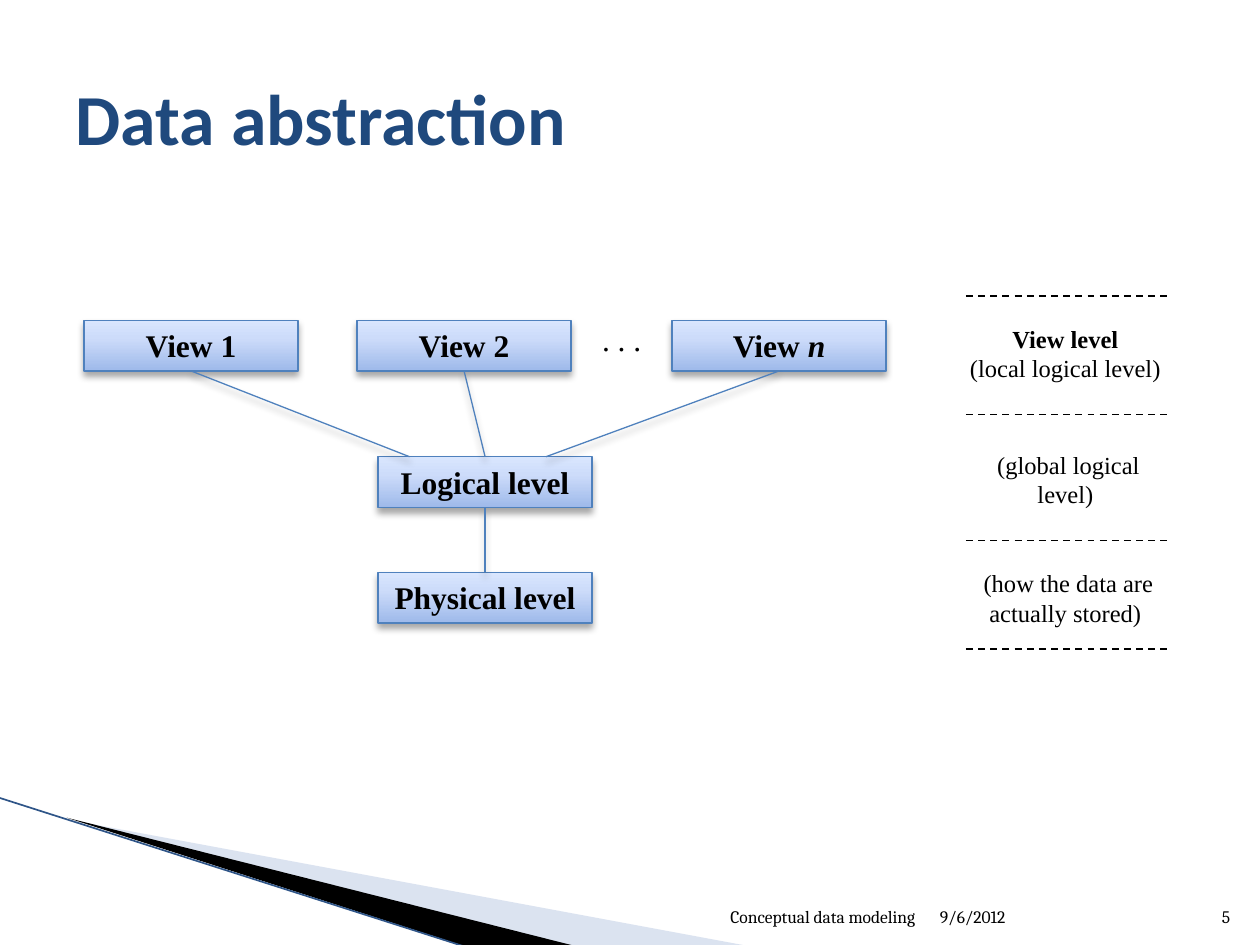
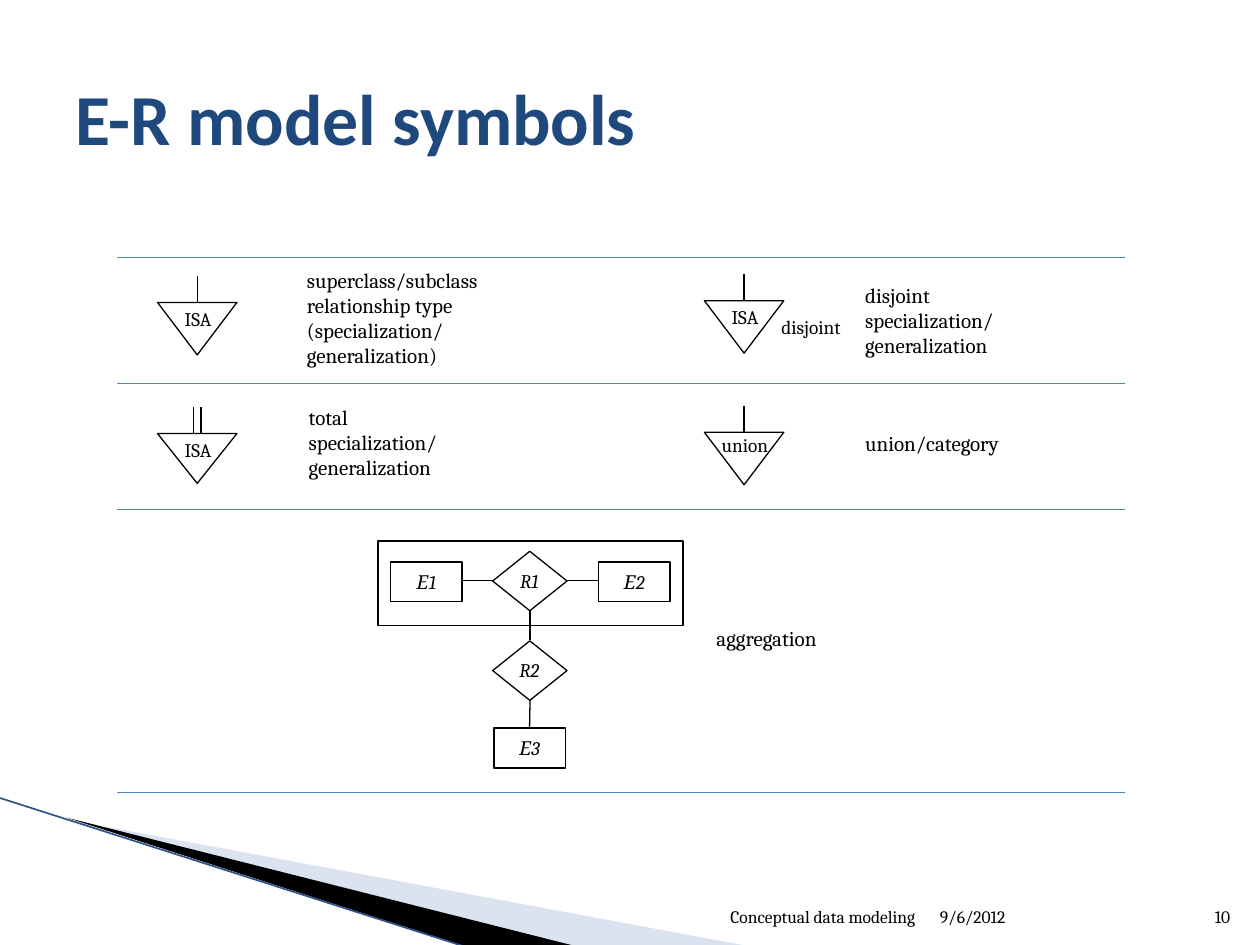
from lxml.etree import SubElement
from pptx import Presentation
from pptx.dml.color import RGBColor
from pptx.enum.dml import MSO_LINE
from pptx.enum.shapes import MSO_CONNECTOR, MSO_SHAPE
from pptx.enum.text import MSO_ANCHOR as ANCHOR, PP_ALIGN as ALIGN
from pptx.oxml.ns import qn
from pptx.util import Pt

BLACK = RGBColor(0x00, 0x00, 0x00)
WHITE = RGBColor(0xFF, 0xFF, 0xFF)
NAVY = RGBColor(0x1F, 0x49, 0x7D)
BLUE = RGBColor(0x4F, 0x81, 0xBD)
SWOOSH_LIGHT = RGBColor(0xA7, 0xB9, 0xDB)
SWOOSH_EDGE = RGBColor(0x2F, 0x55, 0x88)
LEVEL_GRADIENT = [(0, "9EB9EA"), (65, "CDDCFA"), (100, "D9E6FE")]

TITLE_FONT, BODY_FONT, DIAGRAM_FONT = "Calibri", "Cambria", "Times New Roman"
DEFAULT_INSETS = (7.2, 3.6)
TIGHT_INSETS = (1.44, 0.72)

# Shared by both slides
FOOTER = "Conceptual data modeling"
DATE = "9/6/2012"
LIGHT_BAND = [(39.6, 468.5), (428.4, 540.7), (328.3, 540.7)]
DARK_BAND = [(38.2, 467.3), (329, 540.7), (267.8, 541.4)]

# Data abstraction: a paragraph is a list of (text, style) runs
LEVEL_SIZE = LEVEL_W, LEVEL_H = 122.4, 29
LEVELS = [
    (216, 327, [("Physical level", "b")]),
    (216, 261, [("Logical level", "b")]),
    (204, 183, [("View 2", "b")]),
    (48, 183, [("View 1", "b")]),
    (384, 183, [("View ", "b"), ("n", "bi")]),
]
LEVEL_LINKS = [
    (109.2, 212, 234, 261),
    (265.2, 212, 277.2, 261),
    (445.2, 212, 312, 261),
    (277.2, 290, 277.2, 327),
]
LEVEL_RULES = [169.2, 236.9, 308.9, 370.8]
LEVEL_NOTES = [
    (181.4, 38, [[("View level", "b")], [("(local logical level)", "")]]),
    (253.4, 42, [[(" (global logical level)", "")]]),
    (321.1, 37, [[(" (how the data are actually stored)", "")]]),
]

# E-R model symbols
ROW_RULES = [147, 219, 291, 453]
MEANINGS = [
    (493, 160.5, ["disjoint", "specialization/", "generalization"]),
    (175, 230.5, ["total", "specialization/", "generalization"]),
    (493, 245.5, ["union/category"]),
    (408, 357, ["aggregation"]),
    (174, 152, ["superclass/subclass", "relationship type", "(specialization/",
                "generalization)"]),
]
# left, top, height, stem offsets from the middle, label, label width, label drop
ISA_SYMBOLS = [
    (90, 172.8, 30, [0], "ISA", 24, 2),
    (402.5, 171.8, 30, [0], "ISA", 24, 2),
    (90, 247.7, 28.5, [-2.1, 2.1], "ISA", 24, 2),
    (402.5, 247, 30, [0], "union", 36, 0),
]
ISA_W, STEM_H = 45.4, 15
ENTITIES = [("Е1", 223.2, 321), ("Е2", 342, 321), ("Е3", 282.2, 416.2)]
RELATIONSHIPS = [("R1", 281.5, 315), ("R2", 281.5, 366.2)]
AGGREGATION_LINKS = [
    (324, 331.9, 341.5, 331.9),
    (264.7, 331.9, 281.5, 331.9),
    (302.9, 349, 302.9, 366),
    (302.9, 400, 302.6, 416),
]
AGGREGATE = (216, 309, 174.3, 48.5)


def put_text(box, paragraphs, font, size, color=BLACK, align=ALIGN.LEFT,
             anchor=ANCHOR.TOP, insets=DEFAULT_INSETS):
    frame = box.text_frame
    frame.word_wrap = True
    frame.vertical_anchor = anchor
    frame.margin_left = frame.margin_right = Pt(insets[0])
    frame.margin_top = frame.margin_bottom = Pt(insets[1])
    for index, runs in enumerate(paragraphs):
        paragraph = frame.add_paragraph() if index else frame.paragraphs[0]
        paragraph.alignment = align
        paragraph.font.name = font
        paragraph.font.size = Pt(size)
        paragraph.font.color.rgb = color
        for text, style in runs:
            run = paragraph.add_run()
            run.text = text
            run.font.bold = "b" in style
            run.font.italic = "i" in style


def add_text(slide, left, top, width, height, paragraphs, font, size, **style):
    box = slide.shapes.add_textbox(Pt(left), Pt(top), Pt(width), Pt(height))
    put_text(box, paragraphs, font, size, **style)


def paint(shape, fill=WHITE, line=None, weight=0.75):
    shape.shadow.inherit = False
    if fill is None:
        shape.fill.background()
    else:
        shape.fill.solid()
        shape.fill.fore_color.rgb = fill
    if line is None:
        shape.line.fill.background()
    else:
        shape.line.color.rgb = line
        shape.line.width = Pt(weight)


def add_preset(slide, kind, left, top, width, height, **look):
    shape = slide.shapes.add_shape(kind, Pt(left), Pt(top), Pt(width), Pt(height))
    paint(shape, **look)
    return shape


def add_line(slide, x1, y1, x2, y2, color=BLACK, weight=0.75):
    line = slide.shapes.add_connector(MSO_CONNECTOR.STRAIGHT, Pt(x1), Pt(y1), Pt(x2), Pt(y2))
    line.line.color.rgb = color
    line.line.width = Pt(weight)
    SubElement(line._element.spPr, qn("a:effectLst"))
    return line


def add_band(slide, points, color):
    (x, y), *rest = points
    builder = slide.shapes.build_freeform(Pt(x), Pt(y))
    builder.add_line_segments([(Pt(px), Pt(py)) for px, py in rest], close=True)
    band = builder.convert_to_shape()
    paint(band, fill=color)
    return band


def set_alpha(color, percent):
    SubElement(color, qn("a:alpha"), val=str(percent * 1000))


def cast_shadow(shape):
    """Soft shadow straight below the shape."""
    effects = shape._element.spPr.find(qn("a:effectLst"))
    shadow = SubElement(effects, qn("a:outerShdw"), blurRad=str(Pt(4)), dist=str(Pt(3)),
                        dir="5400000", rotWithShape="0")
    set_alpha(SubElement(shadow, qn("a:srgbClr"), val=str(BLACK)), 35)


def fill_level(shape):
    """Upward gradient of the level boxes."""
    shape.fill.gradient()
    shape.fill.gradient_angle = 90
    stops = shape._element.spPr.find(".//" + qn("a:gsLst"))
    stops.clear()
    for position, color in LEVEL_GRADIENT:
        stop = SubElement(stops, qn("a:gs"), pos=str(position * 1000))
        SubElement(stop, qn("a:srgbClr"), val=color)


def start_slide(deck, title, number):
    slide = deck.slides.add_slide(deck.slide_layouts[6])
    light = add_band(slide, LIGHT_BAND, SWOOSH_LIGHT)
    set_alpha(light._element.spPr.find(".//" + qn("a:srgbClr")), 40)
    add_band(slide, DARK_BAND, BLACK)
    add_line(slide, -0.7, 455.8, 267.1, 541.4, SWOOSH_EDGE, 0.95)
    for left, width, text, align in [(530, 151, DATE, ALIGN.LEFT),
                                     (345, 185, FOOTER, ALIGN.RIGHT),
                                     (681, 29, str(number), ALIGN.RIGHT)]:
        add_text(slide, left, 504.7, width, 28.8, [[(text, "")]], BODY_FONT, 10,
                 align=align, anchor=ANCHOR.BOTTOM)
    add_text(slide, 36, 21.6, 648, 90, [[(title, "b")]], TITLE_FONT, 41, color=NAVY,
             anchor=ANCHOR.MIDDLE)
    return slide


def build_abstraction(deck):
    slide = start_slide(deck, "Data abstraction", 5)
    for left, top, name in LEVELS:
        level = add_preset(slide, MSO_SHAPE.RECTANGLE, left, top, *LEVEL_SIZE, line=BLUE)
        fill_level(level)
        cast_shadow(level)
        put_text(level, [name], DIAGRAM_FONT, 18, align=ALIGN.CENTER)
    ellipsis = add_preset(slide, MSO_SHAPE.RECTANGLE, 332.6, 179.3, 45.4, 19.4)
    put_text(ellipsis, [[(". . .", "")]], DIAGRAM_FONT, 18, align=ALIGN.CENTER)
    for y in LEVEL_RULES:
        rule = add_line(slide, 552, y, 666.7, y, weight=1)
        rule.line.dash_style = MSO_LINE.DASH
    for top, height, lines in LEVEL_NOTES:
        note = add_preset(slide, MSO_SHAPE.RECTANGLE, 545.8, top, 126, height)
        put_text(note, lines, DIAGRAM_FONT, 14, align=ALIGN.CENTER)
    for ends in LEVEL_LINKS:
        cast_shadow(add_line(slide, *ends, color=BLUE))


def build_symbols(deck):
    slide = start_slide(deck, "E-R model symbols", 10)
    for left, top, lines in MEANINGS:
        add_text(slide, left, top, 172.8, 16.6, [[(line, "")] for line in lines],
                 BODY_FONT, 12, insets=TIGHT_INSETS)
    for y in ROW_RULES:
        add_line(slide, 67, y, 643, y, BLUE)

    for left, top, height, stems, label, label_width, drop in ISA_SYMBOLS:
        triangle = add_preset(slide, MSO_SHAPE.ISOSCELES_TRIANGLE, left, top, ISA_W, height,
                              line=BLACK)
        triangle.rotation = 180
        middle = left + ISA_W / 2
        for offset in stems:
            add_line(slide, middle + offset, top - STEM_H, middle + offset, top)
        add_text(slide, middle + 0.5 - label_width / 2, top + drop, label_width, 16.6,
                 [[(label, "")]], BODY_FONT, 11, align=ALIGN.CENTER, insets=TIGHT_INSETS)
    add_text(slide, 445, 179.3, 54, 16.6, [[("disjoint", "")]], BODY_FONT, 11,
             insets=TIGHT_INSETS)

    for name, left, top in ENTITIES:
        entity = add_preset(slide, MSO_SHAPE.RECTANGLE, left, top, 41, 22.8,
                            line=BLACK, weight=1)
        put_text(entity, [[(name, "i")]], BODY_FONT, 11, align=ALIGN.CENTER,
                 anchor=ANCHOR.MIDDLE, insets=TIGHT_INSETS)
    for name, left, top in RELATIONSHIPS:
        add_preset(slide, MSO_SHAPE.DIAMOND, left, top, 42.5, 34, line=BLACK)
        add_text(slide, left, top + 6.5, 42, 21, [[(name, "i")]], BODY_FONT, 11,
                 align=ALIGN.CENTER)
    for ends in AGGREGATION_LINKS:
        add_line(slide, *ends)
    add_preset(slide, MSO_SHAPE.RECTANGLE, *AGGREGATE, fill=None, line=BLACK, weight=1)


def main():
    deck = Presentation()
    deck.slide_width, deck.slide_height = Pt(720), Pt(540)
    build_abstraction(deck)
    build_symbols(deck)
    deck.save("out.pptx")


if __name__ == "__main__":
    main()
